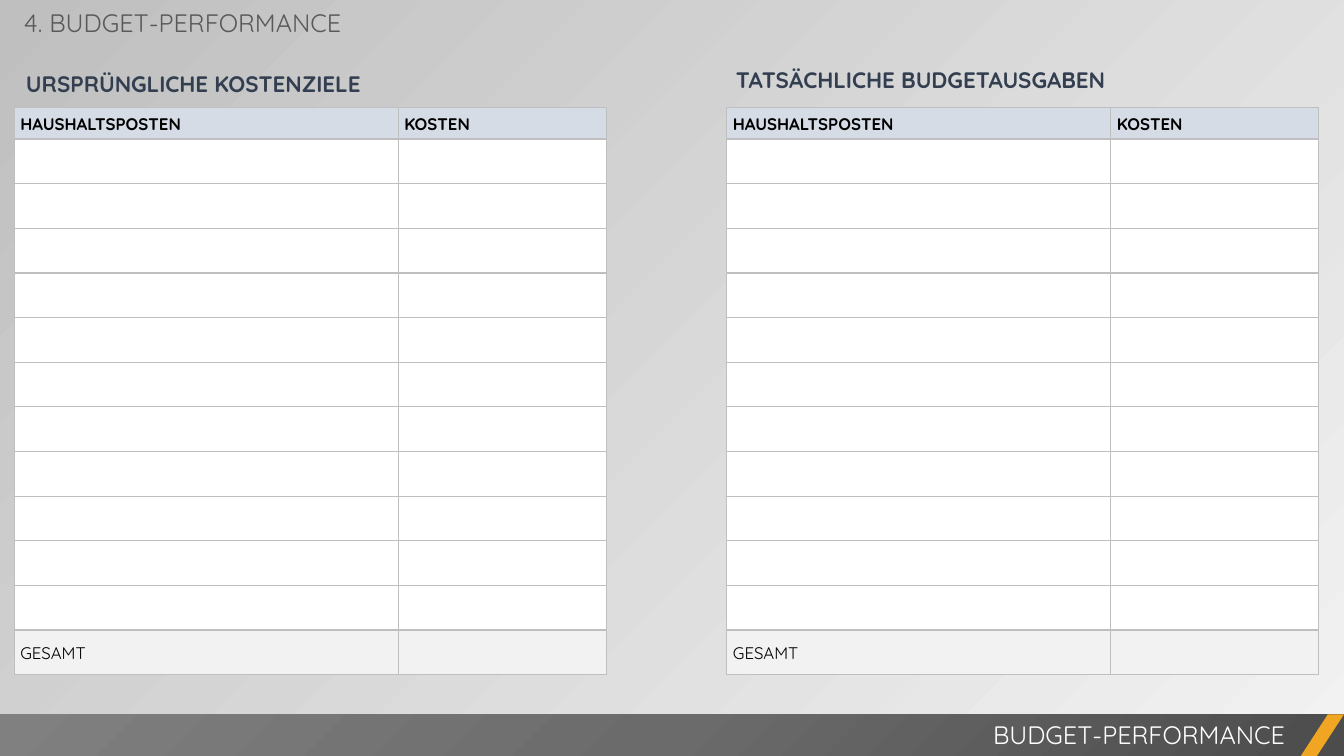
import pptx
import pptx.util
import pptx.dml.color
import pptx.enum.shapes
import pptx.enum.text
import pptx.oxml
import pptx.oxml.ns

Pt = pptx.util.Pt
RGB = pptx.dml.color.RGBColor
SHAPE = pptx.enum.shapes.MSO_SHAPE
ALIGN = pptx.enum.text.PP_ALIGN
ANCHOR = pptx.enum.text.MSO_ANCHOR
AUTO = pptx.enum.text.MSO_AUTO_SIZE

FONT = "Quicksand"
BLACK = RGB(0x00, 0x00, 0x00)
WHITE = RGB(0xFF, 0xFF, 0xFF)
NAVY = RGB(0x33, 0x3F, 0x50)
GREY = RGB(0x59, 0x59, 0x59)
BORDER = RGB(0xBF, 0xBF, 0xBF)
PALE = RGB(0xF2, 0xF2, 0xF2)
HEADER = RGB(0xD6, 0xDC, 0xE5)
ORANGE = RGB(0xF0, 0xA6, 0x22)
FOOTER_STOPS = [(0, RGB(0x4C, 0x4C, 0x4C)), (50, RGB(0x6B, 0x6B, 0x6B)),
                (100, RGB(0x80, 0x80, 0x80))]

SLIDE_W, SLIDE_H = 960, 540
EMPTY_ROWS = 11
HEADING = {"line_spacing": Pt(21.5), "space_before": Pt(3.2)}


class Deck:
    def __init__(self):
        self.prs = pptx.Presentation()
        self.prs.slide_width, self.prs.slide_height = Pt(SLIDE_W), Pt(SLIDE_H)
        self.s = self.prs.slides.add_slide(self.prs.slide_layouts[6])

    def background(self, start, end, angle):
        fill = self.s.background.fill
        fill.gradient()
        fill.gradient_angle = angle
        for stop, color, pos in zip(fill.gradient_stops, (start, end), (0, 1)):
            stop.color.rgb, stop.position = color, pos

    def add_text(self, tf, text, size, color, bold=False, **para):
        p = tf.paragraphs[0]
        for key, value in para.items():
            setattr(p, key, value)
        r = p.add_run()
        r.text = text
        for key, value in {"name": FONT, "size": Pt(size), "bold": bold}.items():
            setattr(r.font, key, value)
        r.font.color.rgb = color

    def text(self, box, text, size, color, bold=False, inset=(7.2, 3.6), **para):
        tf = self.s.shapes.add_textbox(*map(Pt, box)).text_frame
        across, down = map(Pt, inset)
        layout = {"word_wrap": True, "auto_size": AUTO.SHAPE_TO_FIT_TEXT,
                  "margin_left": across, "margin_right": across,
                  "margin_top": down, "margin_bottom": down}
        for key, value in layout.items():
            setattr(tf, key, value)
        self.add_text(tf, text, size, color, bold, **para)

    def shape(self, kind, box, color):
        sp = self.s.shapes.add_shape(kind, *map(Pt, box))
        sp.shadow.inherit = False
        sp.line.fill.background()
        sp.fill.solid()
        sp.fill.fore_color.rgb = color
        return sp

    def radial(self, sp, stops):
        """Gradient that spreads from the bottom right corner."""
        gs = "".join(f'<a:gs pos="{pos * 1000}"><a:srgbClr val="{color}"/></a:gs>'
                     for pos, color in stops)
        grad = pptx.oxml.parse_xml(
            f'<a:gradFill {pptx.oxml.ns.nsdecls("a")}><a:gsLst>{gs}</a:gsLst>'
            '<a:path path="circle"><a:fillToRect l="100000" t="100000"/></a:path>'
            '</a:gradFill>')
        solid = sp._element.spPr.find(pptx.oxml.ns.qn("a:solidFill"))
        solid.getparent().replace(solid, grad)

    def cell(self, cell, text, fill, bold):
        # Borders precede the fill in the cell properties
        tc_pr = cell._tc.get_or_add_tcPr()
        for side in "LRTB":
            tc_pr.append(pptx.oxml.parse_xml(
                f'<a:ln{side} {pptx.oxml.ns.nsdecls("a")} w="{int(Pt(1))}"><a:solidFill>'
                f'<a:srgbClr val="{BORDER}"/></a:solidFill></a:ln{side}>'))
        cell.fill.solid()
        cell.fill.fore_color.rgb = fill
        layout = {"vertical_anchor": ANCHOR.MIDDLE, "margin_left": Pt(4.3),
                  "margin_right": Pt(4.3), "margin_top": 0, "margin_bottom": 0}
        for key, value in layout.items():
            setattr(cell, key, value)
        if text:
            self.add_text(cell.text_frame, text, 12, BLACK, bold, line_spacing=1.07)

    def table(self, left, top, widths, heights, rows):
        box = (left, top, sum(widths), sum(heights))
        table = self.s.shapes.add_table(len(rows), len(widths), *map(Pt, box)).table
        table.first_row = table.horz_banding = False
        for col, width in zip(table.columns, widths):
            col.width = Pt(width)
        for i, (texts, fill, bold) in enumerate(rows):
            table.rows[i].height = Pt(heights[i])
            for j, text in enumerate(texts):
                self.cell(table.cell(i, j), text, fill, bold)


def main():
    deck = Deck()
    deck.background(PALE, BORDER, 135)

    # Two budget tables with their headings
    rows = ([(("HAUSHALTSPOSTEN", "KOSTEN"), HEADER, True)]
            + [(("", ""), WHITE, False)] * EMPTY_ROWS
            + [(("GESAMT", ""), PALE, False)])
    heights = [22.5] + [31.9] * (EMPTY_ROWS + 1)
    for title, title_left, title_top, left in (
            ("URSPRÜNGLICHE KOSTENZIELE", 10, 43.2, 10.2),
            ("TATSÄCHLICHE BUDGETAUSGABEN", 517, 40.7, 519.2)):
        deck.text((title_left, title_top, 402, 29), title, 16, NAVY, True,
                  (8.6, 4.3), **HEADING)
        deck.table(left, 76.8, (274.3, 148.5), heights, rows)

    # Page title
    deck.text((10, 2, 382, 29), "4. BUDGET-PERFORMANCE", 18, GREY)

    # Footer band
    band = deck.shape(SHAPE.RECTANGLE, (0, 510.3, SLIDE_W, 30), FOOTER_STOPS[0][1])
    deck.radial(band, FOOTER_STOPS)
    deck.text((378, 510, 547, 29), "BUDGET-PERFORMANCE", 18, WHITE,
              alignment=ALIGN.RIGHT)
    accent = deck.shape(SHAPE.PARALLELOGRAM, (929, 510.3, 31, 30), ORANGE)
    accent.adjustments[0] = 0.65

    deck.prs.save("out.pptx")


if __name__ == "__main__":
    main()
